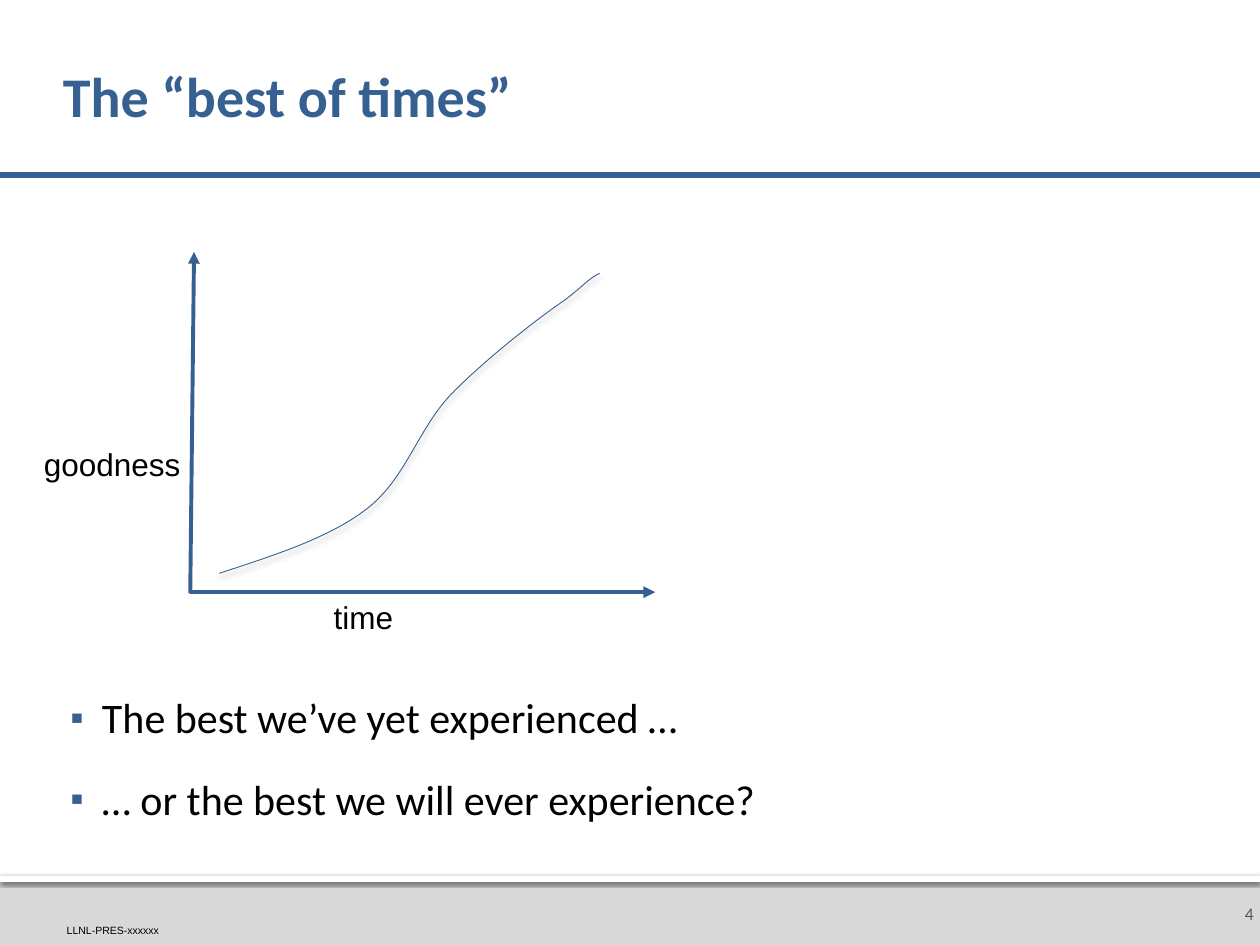
from lxml.etree import SubElement as add_element
from pptx import Presentation
from pptx.dml.color import RGBColor
from pptx.enum.shapes import MSO_CONNECTOR as CONNECTOR, MSO_SHAPE as SHAPE
from pptx.enum.text import MSO_ANCHOR as ANCHOR, PP_ALIGN as ALIGN
from pptx.oxml.ns import qn
from pptx.util import Inches, Pt

COLUMNS, ROWS = 100, 75
BLUE, BLACK, WHITE, GREY, DARK_GREY = "376092", "000000", "FFFFFF", "D9D9D9", "595959"
CURVE_START = (17.4, 45.5)
CURVE_PIECES = [
    [(21.7, 44.1), (26.1, 42.7), (29.1, 40.4)],
    [(32.2, 38), (33.1, 34.2), (35.7, 31.4)],
    [(38.3, 28.7), (42.5, 25.4), (44.7, 23.9)],
    [(46.1, 22.9), (46.8, 22), (47.6, 21.7)],
]


def color(value):
    """Turn a hex string into a colour."""
    return RGBColor.from_string(value)


def curve_points(start, pieces, steps=16):
    """Sample a chain of cubic curves at equal parameter steps."""
    points = [start]
    for first, second, end in pieces:
        corners = (start, first, second, end)
        for step in range(1, steps + 1):
            t = step / steps
            weights = ((1 - t) ** 3, 3 * t * (1 - t) ** 2, 3 * t**2 * (1 - t), t**3)
            points.append(tuple(sum(w * corner[axis] for w, corner in zip(weights, corners))
                                for axis in (0, 1)))
        start = end
    return points


class SlideBuilder:
    """Hold the style and the current slide, measured in columns and rows."""

    heading_font, label_font = "Calibri", "Arial"

    def __init__(self, presentation):
        """Start a blank slide."""
        self.slide = presentation.slides.add_slide(presentation.slide_layouts[6])
        self.column = presentation.slide_width / COLUMNS
        self.row = presentation.slide_height / ROWS

    def place(self, *lengths):
        """Turn alternating columns and rows into slide lengths."""
        return [round(length * (self.row if index % 2 else self.column))
                for index, length in enumerate(lengths)]

    def shadow(self, shape, opacity, blur, distance):
        """Give a shape a black shadow that falls straight down."""
        shape.shadow.inherit = False
        effects = shape._element.spPr.find(qn("a:effectLst"))
        outer = add_element(effects, qn("a:outerShdw"), blurRad=str(Pt(blur)),
                            dist=str(Pt(distance)), dir="5400000", rotWithShape="0")
        black = add_element(outer, qn("a:srgbClr"), val=BLACK)
        add_element(black, qn("a:alpha"), val=str(opacity * 1000))

    def band(self, box, fill):
        """Draw a plain filled rectangle."""
        shape = self.slide.shapes.add_shape(SHAPE.RECTANGLE, *self.place(*box))
        shape.shadow.inherit = False
        shape.fill.solid()
        shape.fill.fore_color.rgb = color(fill)
        shape.line.fill.background()
        return shape

    def line(self, start, end, width, arrow=False):
        """Draw a blue line, with an arrowhead at its end on request."""
        connector = self.slide.shapes.add_connector(
            CONNECTOR.STRAIGHT, *self.place(*start, *end))
        connector.line.color.rgb = color(BLUE)
        connector.line.width = Pt(width)
        if arrow:
            add_element(connector.line._get_or_add_ln(), qn("a:tailEnd"), type="triangle")
        add_element(connector._element.spPr, qn("a:effectLst"))

    def curve(self, start, pieces, width):
        """Draw a smooth open blue curve."""
        points = [self.place(*point) for point in curve_points(start, pieces)]
        builder = self.slide.shapes.build_freeform(*points[0])
        builder.add_line_segments(points[1:], close=False)
        shape = builder.convert_to_shape()
        shape.fill.background()
        shape.line.color.rgb = color(BLUE)
        shape.line.width = Pt(width)
        return shape

    def text(self, box, lines, size, font=label_font, fill=BLACK, bold=False, wrap=True,
             anchor=ANCHOR.TOP, align=ALIGN.LEFT, insets=(0.1, 0.05, 0.1, 0.05),
             spacing=None, bullet=None):
        """Write one paragraph per line of text."""
        frame = self.slide.shapes.add_textbox(*self.place(*box)).text_frame
        frame.word_wrap = wrap
        frame.vertical_anchor = anchor
        (frame.margin_left, frame.margin_top,
         frame.margin_right, frame.margin_bottom) = map(Inches, insets)
        for index, line in enumerate(lines):
            paragraph = frame.add_paragraph() if index else frame.paragraphs[0]
            paragraph.alignment = align
            paragraph.line_spacing = spacing
            if bullet:
                self.bullet(paragraph, bullet)
                paragraph.space_before = Pt(12 if index else 0)
                paragraph.space_after = Pt(6)
            run = paragraph.add_run()
            run.text = line
            run.font.name, run.font.size, run.font.bold = font, Pt(size), bold
            run.font.color.rgb = color(fill)

    def bullet(self, paragraph, character):
        """Give a paragraph a blue bullet and a hanging indent."""
        properties = paragraph._p.get_or_add_pPr()
        properties.set("marL", str(Inches(0.31)))
        properties.set("indent", str(Inches(-0.25)))
        add_element(add_element(properties, qn("a:buClr")), qn("a:srgbClr"), val=BLUE)
        add_element(properties, qn("a:buSzPct"), val="90000")
        add_element(properties, qn("a:buFont"), typeface=self.label_font)
        add_element(properties, qn("a:buChar"), char=character)


def main():
    """Build the slide and save it."""
    presentation = Presentation()
    presentation.slide_width, presentation.slide_height = Inches(10), Inches(7.5)
    builder = SlideBuilder(presentation)
    heading_font = builder.heading_font

    builder.band((0, 69.5, COLUMNS, 5.5), GREY)
    builder.shadow(builder.band((0, 69.5, COLUMNS, 0.5), WHITE), 60, 2.5, 0.8)
    builder.text((5.3, 73.3, 9.6, 1), ["LLNL-PRES-xxxxxx"], 6, wrap=False,
                 anchor=ANCHOR.BOTTOM, insets=(0, 0, 0, 0))
    builder.text((96.5, 70, 3.5, 5), ["4"], 10, heading_font, DARK_GREY,
                 anchor=ANCHOR.MIDDLE, align=ALIGN.RIGHT, insets=(0.1, 0.05, 0.05, 0.05))
    builder.line((0, 13.9), (COLUMNS, 13.9), 3)

    builder.text((5, 2.4, 90, 11), ["The “best of times”"], 32, heading_font, BLUE, bold=True,
                 anchor=ANCHOR.MIDDLE, insets=(0, 0.05, 0.05, 0.05), spacing=0.9)
    builder.text((5, 54.9, 90, 14.2),
                 ["The best we’ve yet experienced …", "… or the best we will ever experience?"],
                 24, heading_font, insets=(0, 0, 0, 0), bullet="▪")

    builder.shadow(builder.curve(CURVE_START, CURVE_PIECES, 0.5), 38, 3.5, 2)
    builder.line((15.1, 47), (52, 47), 2.25, arrow=True)
    builder.line((15.1, 47.1), (15.4, 20), 2.25, arrow=True)
    builder.text((25.5, 47, 6.8, 4), ["time"], 18, wrap=False)
    builder.text((2.5, 34.8, 13, 4), ["goodness"], 18, wrap=False)

    presentation.save("out.pptx")


if __name__ == "__main__":
    main()
